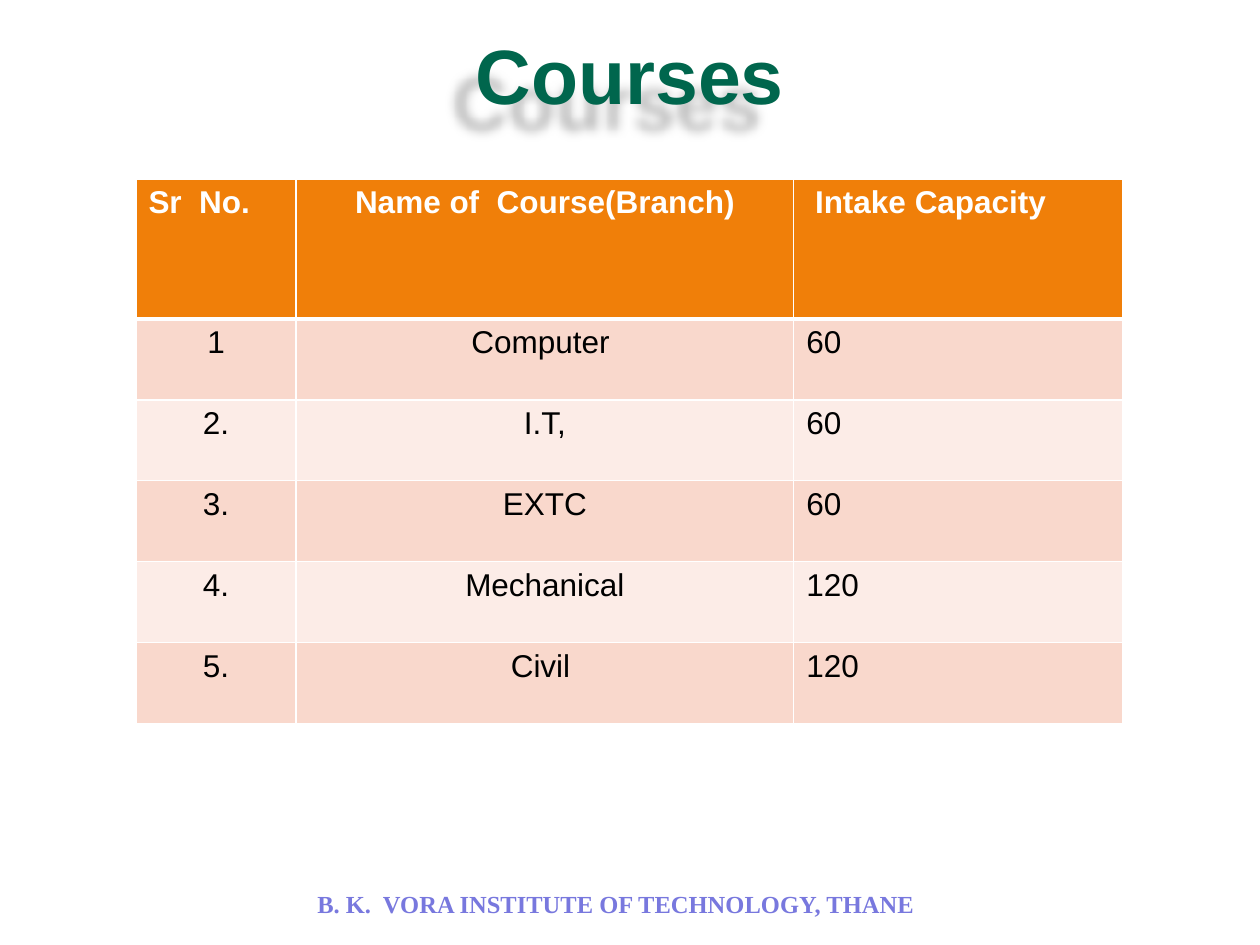
from lxml import etree
from pptx import Presentation
from pptx.dml.color import RGBColor
from pptx.enum.text import MSO_ANCHOR as Anchor, PP_ALIGN as Align
from pptx.oxml import parse_xml
from pptx.oxml.ns import nsdecls, qn
from pptx.util import Cm, Pt

COURSES = [
    ("Sr  No.", "Name of  Course(Branch)", " Intake Capacity"),
    ("1", "Computer ", "60"),
    ("2.", "I.T,", "60"),
    ("3.", "EXTC", "60"),
    ("4.", "Mechanical", "120"),
    ("5.", "Civil ", "120"),
]
COLUMN_WIDTHS = (3.23, 10.03, 6.63)
HEADER_HEIGHT, ROW_HEIGHT = 2.82, 1.63
HEADER_FILL, ROW_FILLS = "F07F09", ("F9D8CC", "FCECE7")
TITLE_FONT = {"name": "Arial", "size": Pt(44), "bold": True}
FOOTER_FONT = {"name": "Times New Roman", "size": Pt(14), "bold": True}
CELL_FONT = {"name": "Arial", "size": Pt(18)}


def colour(value):
    return RGBColor.from_string(value)


def write_text(frame, text, align, text_colour, font):
    para = frame.paragraphs[0]
    para.alignment = align
    span = para.add_run()
    span.text = text
    for name, value in font.items():
        setattr(span.font, name, value)
    span.font.color.rgb = colour(text_colour)
    return para


def add_text_box(page, left, top, width, height):
    box = page.shapes.add_textbox(Cm(left), Cm(top), Cm(width), Cm(height))
    frame = box.text_frame
    frame.word_wrap = True
    for side in ("left", "top", "right", "bottom"):
        setattr(frame, f"margin_{side}", 0)
    return box


def add_shadow(box):
    """Cast a soft shadow down and to the left of the lettering."""
    box._element.spPr.append(parse_xml(
        f'<a:effectLst {nsdecls("a")}>'
        '<a:outerShdw blurRad="76200" dist="250000" dir="8100000" algn="tl" rotWithShape="0">'
        '<a:srgbClr val="000000"><a:alpha val="25000"/></a:srgbClr>'
        '</a:outerShdw></a:effectLst>'))


def add_title(page, left, top, width, height):
    box = add_text_box(page, left, top, width, height)
    box.text_frame.vertical_anchor = Anchor.MIDDLE
    write_text(box.text_frame, "Courses", Align.CENTER, "00664D", TITLE_FONT)
    add_shadow(box)


def add_footer(page, left, top, width, height):
    box = add_text_box(page, left, top, width, height)
    para = write_text(box.text_frame, "B. K.  VORA INSTITUTE OF TECHNOLOGY, THANE",
                      Align.CENTER, "7878DE", FOOTER_FONT)
    para.line_spacing = 0.93


def set_borders(cell, widths):
    """Draw white cell borders; widths maps L, R, T and B to points."""
    properties = cell._tc.get_or_add_tcPr()
    for index, (side, width) in enumerate(widths.items()):
        line = etree.Element(qn(f"a:ln{side}"), w=str(Pt(width)))
        fill = etree.SubElement(line, qn("a:solidFill"))
        etree.SubElement(fill, qn("a:srgbClr"), val="FFFFFF")
        properties.insert(index, line)


def add_course_table(page, left, top):
    row_heights = [HEADER_HEIGHT] + [ROW_HEIGHT] * (len(COURSES) - 1)
    table = page.shapes.add_table(
        len(COURSES), len(COLUMN_WIDTHS), Cm(left), Cm(top),
        Cm(sum(COLUMN_WIDTHS)), Cm(sum(row_heights))).table
    for column, width in zip(table.columns, COLUMN_WIDTHS):
        column.width = Cm(width)
    for row_index, (course, height) in enumerate(zip(COURSES, row_heights)):
        table.rows[row_index].height = Cm(height)
        header = row_index == 0
        fill = HEADER_FILL if header else ROW_FILLS[(row_index - 1) % 2]
        for column_index, text in enumerate(course):
            cell = table.cell(row_index, column_index)
            cell.fill.solid()
            cell.fill.fore_color.rgb = colour(fill)
            set_borders(cell, {"L": 1, "R": 1, "T": 3 if row_index == 1 else 1,
                               "B": 3 if header else 1})
            centred = column_index == 1 or (column_index == 0 and not header)
            write_text(cell.text_frame, text, Align.CENTER if centred else Align.LEFT,
                       "FFFFFF" if header else "000000", {**CELL_FONT, "bold": header})


def main():
    deck = Presentation()
    deck.slide_width, deck.slide_height = Cm(25.4), Cm(19.05)
    page = deck.slides.add_slide(deck.slide_layouts[6])
    add_title(page, 0, 0, 25.4, 2.97)
    add_footer(page, 1.19, 17.98, 22.45, 0.69)
    add_course_table(page, 2.74, 3.61)
    deck.save("out.pptx")


if __name__ == "__main__":
    main()
